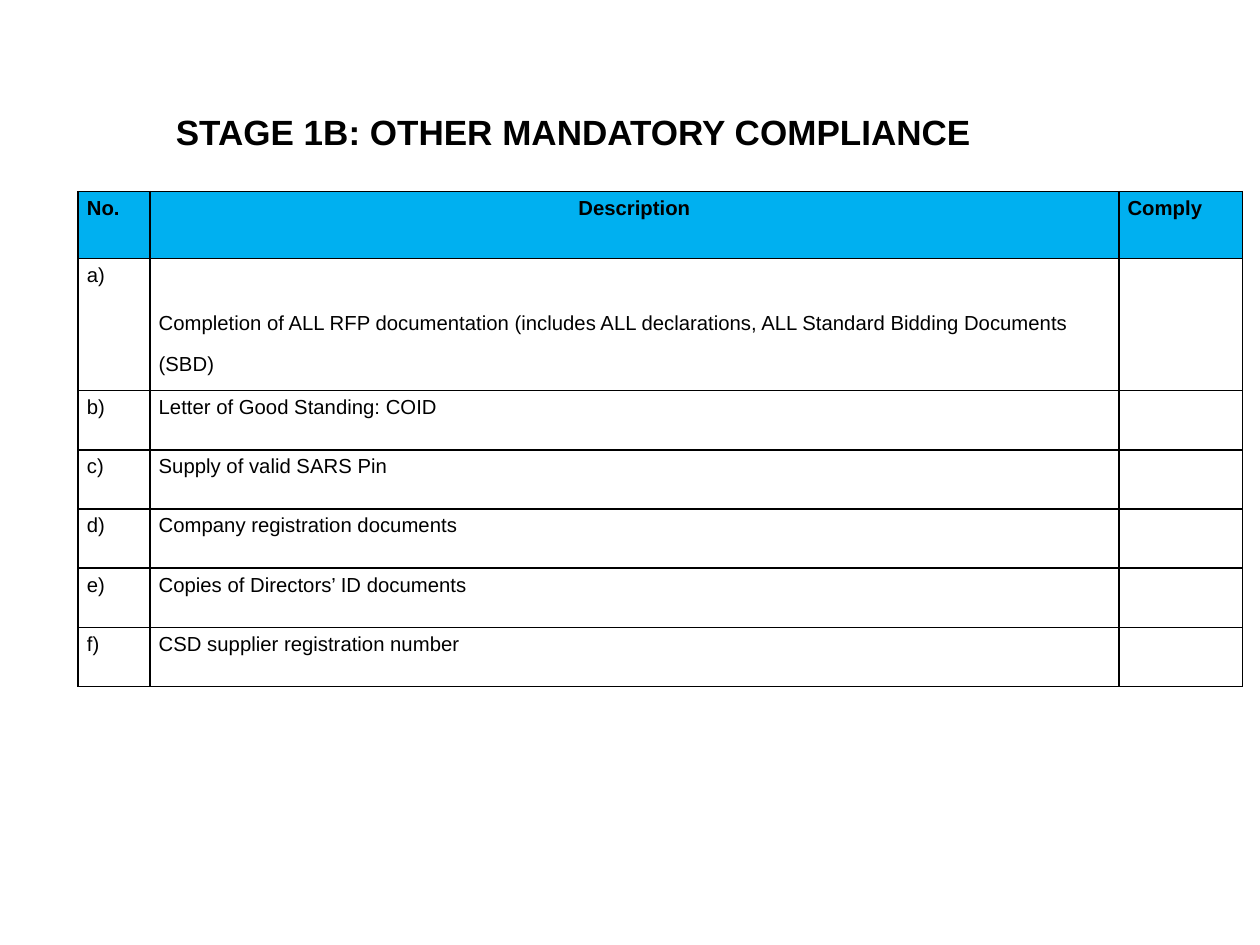
from pptx import Presentation
from pptx.dml.color import RGBColor
from pptx.enum.text import PP_ALIGN as Align
from pptx.oxml import parse_xml
from pptx.oxml.ns import nsdecls
from pptx.util import Inches, Pt

BLACK = RGBColor(0, 0, 0)
SKY = RGBColor(0x00, 0xB0, 0xF0)

COLUMN_WIDTHS = [0.57, 7.69, 0.98]
HEADINGS = ["No.", "Description", "Comply"]
REQUIREMENTS = [
    "Completion of ALL RFP documentation (includes ALL declarations, "
    "ALL Standard Bidding Documents (SBD)",
    "Letter of Good Standing: COID",
    "Supply of valid SARS Pin",
    "Company registration documents",
    "Copies of Directors’ ID documents",
    "CSD supplier registration number",
]
ROW_HEIGHTS = [0.53, 1.05] + [0.47] * (len(REQUIREMENTS) - 1)


class SlideBuilder:
    font_name = "Arial"
    font_size = Pt(20)

    def __init__(self, page):
        self.page = page

    def span(self, para, text, bold=False, baseline=0):
        run = para.add_run()
        run.text = text
        run.font.name = self.font_name
        run.font.size = self.font_size
        run.font.bold = bold
        run.font.color.rgb = BLACK
        if baseline:
            run.font._element.set("baseline", str(baseline * 1000))

    def title(self, text, left, top, width, height):
        box = self.page.shapes.add_textbox(
            Inches(left), Inches(top), Inches(width), Inches(height))
        box.text_frame.word_wrap = True
        para = box.text_frame.paragraphs[0]
        para.alignment = Align.CENTER
        self.span(para, text, bold=True)

    def borders(self, cell):
        properties = cell._tc.get_or_add_tcPr()
        for position, side in enumerate(["lnL", "lnR", "lnT", "lnB"]):
            properties.insert(position, parse_xml(
                f'<a:{side} {nsdecls("a")} w="{Pt(1)}"><a:solidFill>'
                f'<a:srgbClr val="{BLACK}"/></a:solidFill></a:{side}>'))

    def cell(self, cell, text, header=False, centred=False):
        cell.margin_left = cell.margin_right = Inches(0.07)
        cell.margin_top = cell.margin_bottom = 0
        if header:
            cell.fill.solid()
            cell.fill.fore_color.rgb = SKY
        else:
            cell.fill.background()
        self.borders(cell)
        if text:
            para = cell.text_frame.paragraphs[0]
            para.alignment = Align.CENTER if centred else Align.LEFT
            para.line_spacing = 1.07
            para.space_after = Pt(5.5)
            self.span(para, text, bold=header, baseline=30)

    def table(self, rows, left, top, widths, heights):
        frame = self.page.shapes.add_table(
            len(rows), len(widths), Inches(left), Inches(top),
            Inches(sum(widths)), Inches(sum(heights)))
        table = frame.table
        table.first_row = table.horz_banding = False
        for column, width in zip(table.columns, widths):
            column.width = Inches(width)
        for row, height in zip(table.rows, heights):
            row.height = Inches(height)
        for row_index, texts in enumerate(rows):
            header = row_index == 0
            for column_index, text in enumerate(texts):
                self.cell(table.cell(row_index, column_index), text,
                          header, header and column_index == 1)
        return table


def main():
    deck = Presentation()
    deck.slide_width = Inches(10)
    deck.slide_height = Inches(7.5)
    builder = SlideBuilder(deck.slides.add_slide(deck.slide_layouts[6]))

    rows = [HEADINGS] + [
        [f"{letter})", text, ""]
        for letter, text in zip("abcdef", REQUIREMENTS)]
    table = builder.table(rows, 0.62, 1.52, COLUMN_WIDTHS, ROW_HEIGHTS)
    table.cell(1, 1).margin_top = Inches(0.38)
    builder.title("STAGE 1B: OTHER MANDATORY COMPLIANCE",
                  0.14, 0.83, 8.82, 0.88)

    deck.save("out.pptx")


if __name__ == "__main__":
    main()
